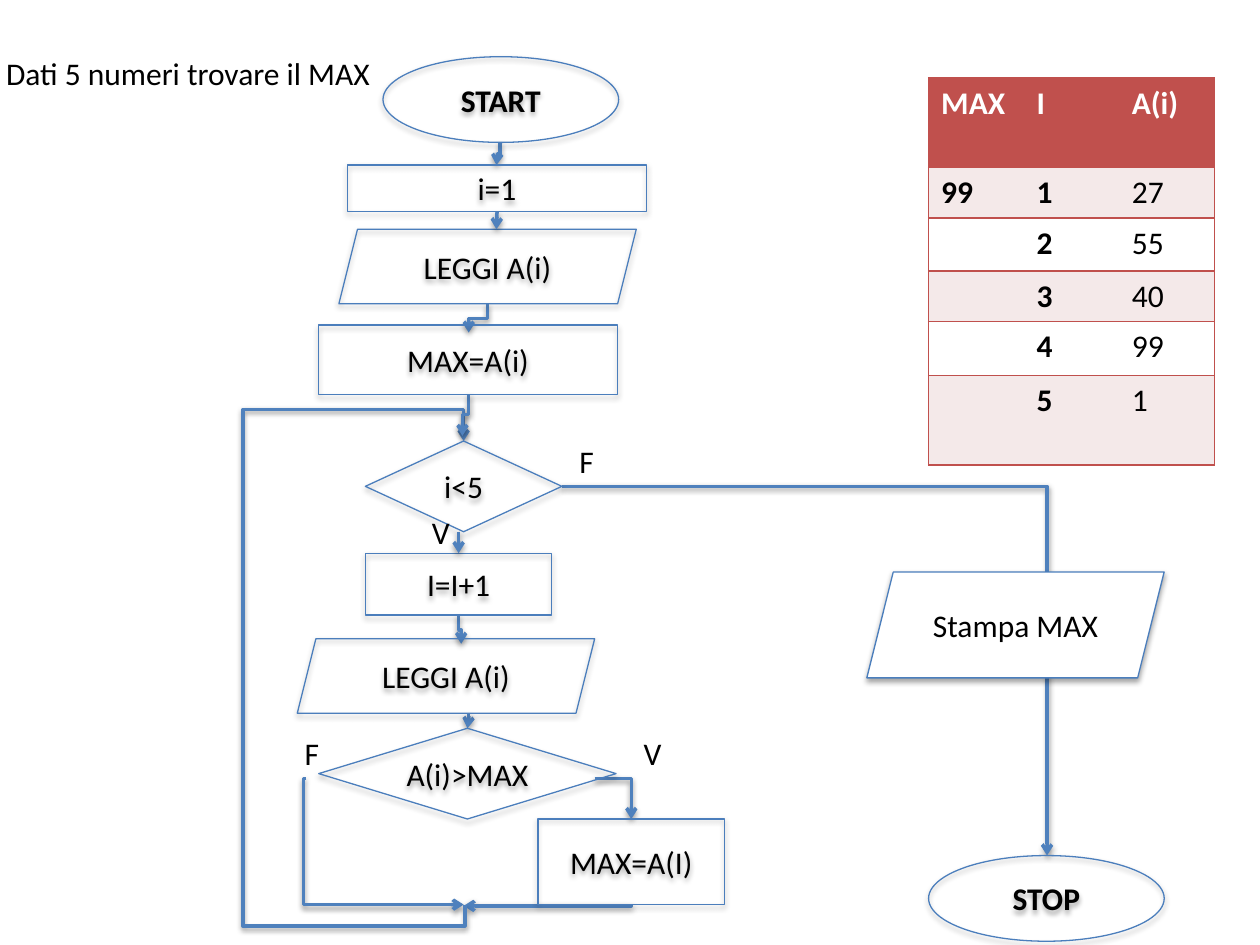
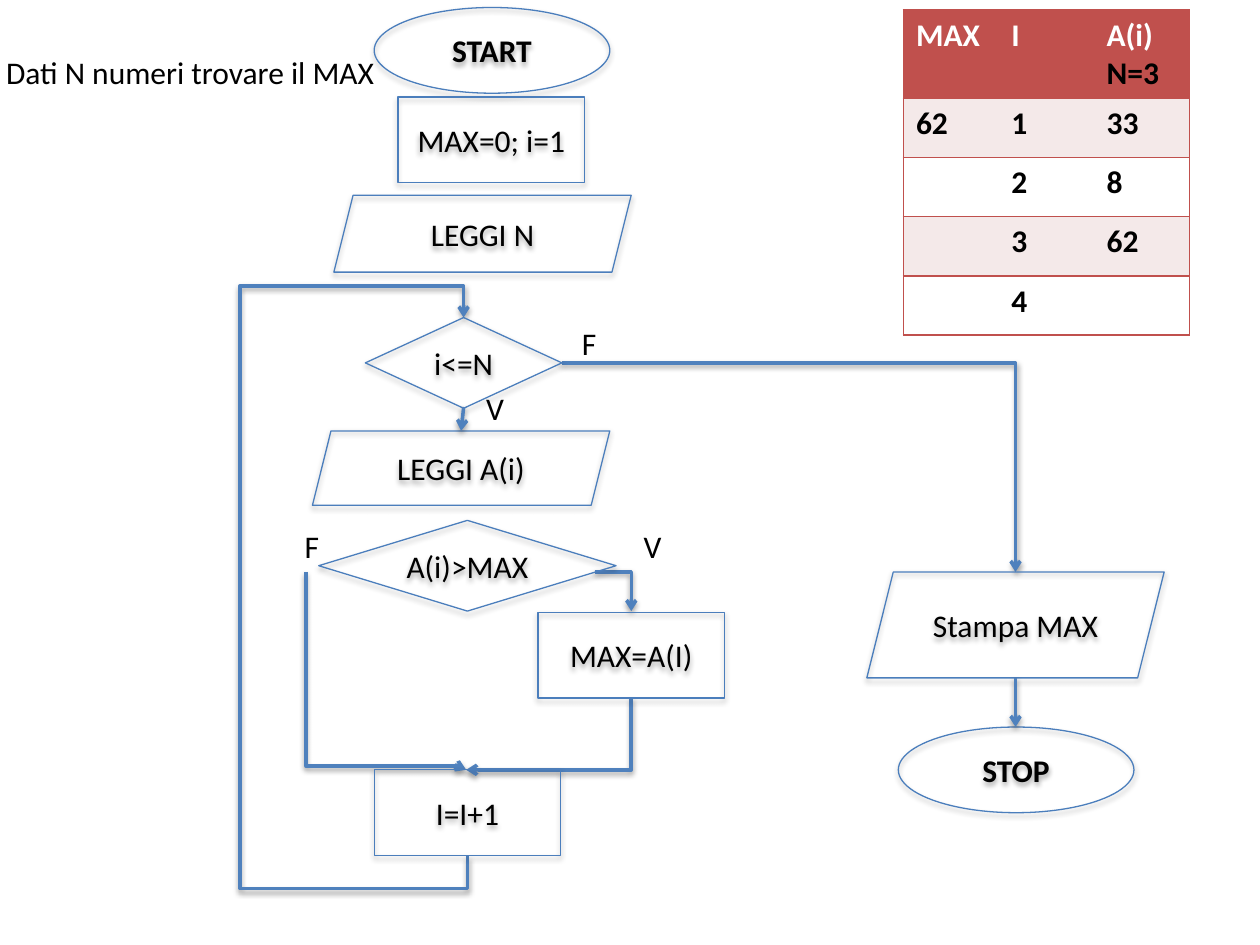
import pptx
import pptx.util
import pptx.dml.color
import pptx.enum.shapes
import pptx.enum.text
import pptx.oxml
import pptx.oxml.ns
from lxml import etree

WIDE, HIGH = 10, 7.5
FONT, SIZE = "Calibri", 18
HUES = {"edge": "4B7EBC", "flow": "4F81BD", "head": "C0504D", "band": "F4E9E9",
        "white": "FFFFFF", "black": "000000"}
PLAIN = "{2D5ABB26-0587-4C30-8999-92F81FD0307C}"
KIND = pptx.enum.shapes.MSO_SHAPE
LINK = pptx.enum.shapes.MSO_CONNECTOR

FORMS = {
    "oval": (KIND.OVAL, 1.87, 0.68),
    "test": (KIND.DIAMOND, 1.56, 0.72),
    "check": (KIND.DIAMOND, 2.36, 0.72),
    "read": (KIND.PARALLELOGRAM, 2.36, 0.59),
    "count": (KIND.PARALLELOGRAM, 2.36, 0.61),
    "print": (KIND.PARALLELOGRAM, 2.36, 0.84),
    "solid": (KIND.PARALLELOGRAM, 2.36, 0.84),
    "box": (KIND.RECTANGLE, 1.48, 0.68),
    "step": (KIND.RECTANGLE, 1.48, 0.49),
    "bar": (KIND.RECTANGLE, 2.37, 0.55),
    "thin": (KIND.RECTANGLE, 2.37, 0.37),
}

PAGES = [
    {
        "forms": [
            ("oval", 3.04, 0.45, "START"),
            ("oval", 7.37, 6.79, "STOP"),
            ("test", 2.9, 3.5, "i<5"),
            ("read", 2.36, 5.07, "LEGGI A(i)"),
            ("bar", 2.53, 2.58, "MAX=A(i)"),
            ("check", 2.53, 5.78, "A(i)>MAX"),
            ("box", 4.27, 6.5, "MAX=A(I)"),
            ("solid", 6.88, 4.54, "Stampa MAX"),
            ("read", 2.69, 1.82, "LEGGI A(i)"),
            ("thin", 2.76, 1.31, "i=1"),
            ("step", 2.9, 4.39, "I=I+1"),
        ],
        "notes": [
            (2.32, 5.78, 0.32, "F"), (5.01, 5.78, 0.35, "V"),
            (3.33, 4.02, 0.35, "V"), (4.5, 3.46, 0.32, "F"),
            (-0.05, 0.38, 3.12, "Dati 5 numeri trovare il MAX"),
        ],
        "lines": [((3.94, 1.68), (3.94, 1.82)), ((3.64, 4.22), (3.64, 4.39))],
        "bends": [
            ((4.72, 6.18), "across", [], (5.01, 6.5)),
            ((2.43, 6.18), "across", [2.41], (3.68, 7.18)),
            ((5.01, 7.18), "down", [7.19, 3.97], (3.68, 7.19)),
            ((3.69, 7.18), "down", [7.35, 1.9, 3.25], (3.68, 3.5)),
            ((4.46, 3.86), "across", [], (8.31, 6.79)),
            ((3.97, 1.13), "down", [1.22], (3.94, 1.31)),
            ((3.72, 3.13), "down", [3.29], (3.67, 3.46)),
            ((3.64, 4.88), "down", [5], (3.66, 5.11)),
            ((3.72, 5.66), "down", [5.72], (3.71, 5.78)),
            ((3.87, 2.41), "down", [2.53], (3.72, 2.64)),
        ],
        "table": {
            "at": (7.37, 0.62), "tall": [0.71, 0.37, 0.42, 0.4, 0.43, 0.71],
            "light": True,
            "rows": [["MAX", "I", "A(i)"], ["99", "1", "27"], ["", "2", "55"],
                     ["", "3", "40"], ["", "4", "99"], ["", "5", "1"]],
        },
    },
    {
        "forms": [
            ("oval", 2.97, 0.06, "START"),
            ("oval", 7.13, 5.77, "STOP"),
            ("test", 2.9, 2.52, "i<=N"),
            ("read", 2.48, 3.42, "LEGGI A(i)"),
            ("box", 3.16, 0.77, "MAX=0; i=1"),
            ("count", 2.65, 1.55, "LEGGI N"),
            ("check", 2.53, 4.13, "A(i)>MAX"),
            ("box", 4.27, 4.86, "MAX=A(I)"),
            ("box", 2.97, 6.11, "I=I+1"),
            ("print", 6.88, 4.54, "Stampa MAX"),
        ],
        "notes": [
            (2.32, 4.13, 0.32, "F"), (5.01, 4.13, 0.35, "V"),
            (3.76, 3.04, 0.35, "V"), (4.52, 2.52, 0.32, "F"),
            (-0.05, 0.37, 3.13, "Dati N numeri trovare il MAX"),
        ],
        "lines": [((8.06, 5.38), (8.06, 5.77)), ((3.68, 3.23), (3.66, 3.42))],
        "bends": [
            ((4.72, 4.54), "across", [], (5.01, 4.85)),
            ((2.43, 4.54), "down", [6.08], (3.7, 6.11)),
            ((5.01, 5.54), "down", [], (3.7, 6.11)),
            ((3.71, 6.79), "down", [7.05, 1.9, 2.27], (3.68, 2.52)),
            ((4.46, 2.88), "across", [], (8.06, 4.54)),
        ],
        "table": {
            "at": (7.17, 0.08), "tall": [0.6] + [0.47] * 4, "light": False,
            "rows": [["MAX", "I", "A(i)\nN=3"], ["62", "1", "33"], ["", "2", "8"],
                     ["", "3", "62"], ["", "4", ""]],
        },
    },
]


def inch(*nums):
    return [pptx.util.Inches(n) for n in nums]


def hue(name):
    return pptx.dml.color.RGBColor.from_string(HUES[name])


def node(root, tag, **attrs):
    item = etree.SubElement(root, pptx.oxml.ns.qn("a:" + tag))
    for key, val in attrs.items():
        item.set(key, str(val))
    return item


def write(para, text, tint="black", bold=False):
    run = para.add_run()
    run.text = text
    run.font.name, run.font.size = FONT, pptx.util.Pt(SIZE)
    run.font.bold = bold
    run.font.color.rgb = hue(tint)


def shade(root, dist, alpha):
    glow = node(root, "outerShdw", blurRad=40000, dist=dist, dir=5400000, rotWithShape=0)
    node(node(glow, "srgbClr", val=HUES["black"]), "alpha", val=alpha)


def add_form(slide, form, x, y, text):
    kind, w, h = FORMS[form]
    shape = slide.shapes.add_shape(kind, *inch(x, y, w, h))
    if form == "solid":
        shape.fill.solid()
        shape.fill.fore_color.rgb = hue("white")
    else:
        shape.fill.background()
    shape.line.color.rgb = hue("edge")
    shape.line.width = pptx.util.Pt(0.75)
    shape.shadow.inherit = False
    shade(shape._element.spPr.find(pptx.oxml.ns.qn("a:effectLst")), 23000, 35000)
    frame = shape.text_frame
    frame.vertical_anchor = pptx.enum.text.MSO_ANCHOR.MIDDLE
    para = frame.paragraphs[0]
    para.alignment = pptx.enum.text.PP_ALIGN.CENTER
    write(para, text, bold=form == "oval")
    return shape


def add_note(slide, x, y, w, text):
    frame = slide.shapes.add_textbox(*inch(x, y, w, 0.4)).text_frame
    frame.word_wrap = False
    frame.auto_size = pptx.enum.text.MSO_AUTO_SIZE.SHAPE_TO_FIT_TEXT
    write(frame.paragraphs[0], text)


def dress(link):
    link.line.color.rgb = hue("flow")
    link.line.width = pptx.util.Pt(2)
    node(link.line._get_or_add_ln(), "tailEnd", type="arrow")
    shade(node(link._element.spPr, "effectLst"), 20000, 38000)


def add_line(slide, start, end, rects):
    link = slide.shapes.add_connector(LINK.STRAIGHT, *inch(*start, *end))
    dress(link)
    near = pptx.util.Inches(0.02)
    for rect in rects:
        mid = rect.left + rect.width // 2
        low = rect.top + rect.height
        if abs(link.begin_x - mid) < near and abs(link.begin_y - low) < near:
            link.begin_connect(rect, 2)
        if abs(link.end_x - mid) < near and abs(link.end_y - rect.top) < near:
            link.end_connect(rect, 0)


def add_bend(slide, start, way, turns, end):
    down = way == "down"
    gap = [b - a for a, b in zip(start, end)]
    mid = [(a + b) / 2 for a, b in zip(start, end)]
    span = (gap[1], -gap[0]) if down else gap
    ends = [m + side * s / 2 for side in (-1, 1) for m, s in zip(mid, span)]
    link = slide.shapes.add_connector(LINK.ELBOW, *inch(*ends))
    spot = link._element.spPr
    if down:
        spot.find(pptx.oxml.ns.qn("a:xfrm")).set("rot", "5400000")
    geom = spot.find(pptx.oxml.ns.qn("a:prstGeom"))
    geom.set("prst", f"bentConnector{len(turns) + 2}")
    guide = geom.find(pptx.oxml.ns.qn("a:avLst"))
    for num, turn in enumerate(turns):
        axis = (num + down) % 2
        share = round((turn - start[axis]) / gap[axis] * 100000)
        node(guide, "gd", name=f"adj{num + 1}", fmla=f"val {share}")
    dress(link)


def add_grid(slide, at, tall, light, rows):
    cols = len(rows[0])
    wide = 2.27
    table = slide.shapes.add_table(len(rows), cols, *inch(*at, wide, sum(tall))).table
    table._tbl.tblPr.find(pptx.oxml.ns.qn("a:tableStyleId")).text = PLAIN
    for col in table.columns:
        col.width = pptx.util.Inches(wide / cols)
    for r, row in enumerate(rows):
        table.rows[r].height = pptx.util.Inches(tall[r])
        for c, text in enumerate(row):
            cell = table.cell(r, c)
            sides = "L" * (c == 0) + "R" * (c == cols - 1) + "TB"
            props = cell._tc.get_or_add_tcPr()
            for side in sides:
                rule = node(props, "ln" + side, w=12700)
                node(node(rule, "solidFill"), "srgbClr", val=HUES["head"])
            cell.fill.solid()
            cell.fill.fore_color.rgb = hue("head" if r == 0 else "band" if r % 2 else "white")
            for num, part in enumerate(text.split("\n") if text else []):
                frame = cell.text_frame
                para = frame.add_paragraph() if num else frame.paragraphs[0]
                tint = "white" if r == 0 and num == 0 else "black"
                write(para, part, tint, not (light and r and c == cols - 1))


def main():
    deck = pptx.Presentation()
    deck.slide_width, deck.slide_height = inch(WIDE, HIGH)
    for page in PAGES:
        slide = deck.slides.add_slide(deck.slide_layouts[6])
        for bend in page["bends"]:
            add_bend(slide, *bend)
        forms = [add_form(slide, *form) for form in page["forms"]]
        rects = [f for f in forms if f.auto_shape_type == KIND.RECTANGLE]
        for start, end in page["lines"]:
            add_line(slide, start, end, rects)
        for note in page["notes"]:
            add_note(slide, *note)
        add_grid(slide, **page["table"])
    deck.save("out.pptx")


if __name__ == "__main__":
    main()
